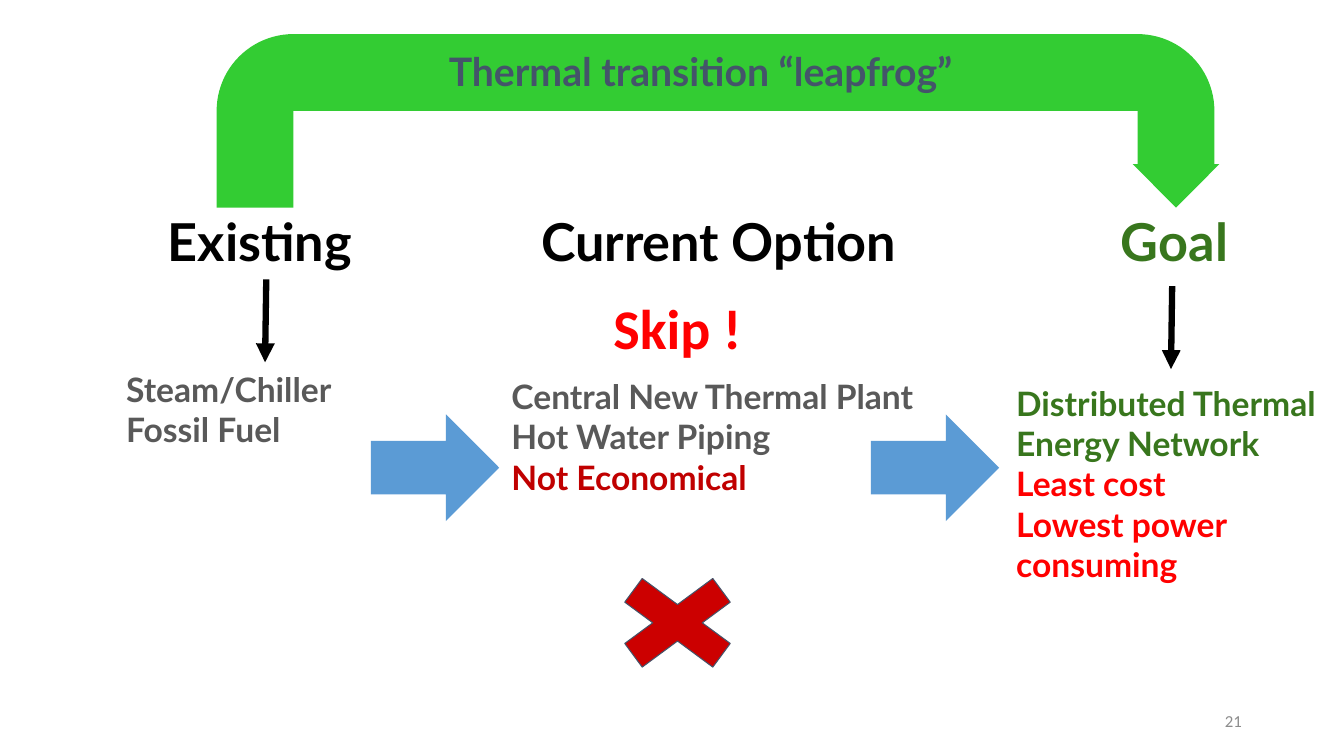
from lxml.etree import SubElement
from pptx import Presentation
from pptx.dml.color import RGBColor
from pptx.enum.shapes import MSO_CONNECTOR, MSO_SHAPE
from pptx.enum.text import MSO_ANCHOR, PP_ALIGN
from pptx.oxml.ns import qn
from pptx.util import Cm, Pt

BLACK, GREY, SLATE = "000000", "595959", "44546A"
GREEN, RED, DARK_RED, BLUE = "38761D", "FF0000", "C00000", "5B9BD5"


def set_color(color_format, value):
    color_format.rgb = RGBColor.from_string(value)


def add_text(s, box, lines, size, font="Lato", bold=True, align=PP_ALIGN.LEFT,
             anchor=MSO_ANCHOR.TOP, inset_x=0.34, inset_y=0.17):
    tf = s.shapes.add_textbox(*map(Cm, box)).text_frame
    tf.word_wrap = True
    tf.vertical_anchor = anchor
    tf.margin_left = tf.margin_right = Cm(inset_x)
    tf.margin_top = tf.margin_bottom = Cm(inset_y)
    for i, (text, color) in enumerate(lines):
        p = tf.add_paragraph() if i else tf.paragraphs[0]
        p.alignment = align
        r = p.add_run()
        r.text = text
        r.font.name = font
        r.font.size = Pt(size)
        r.font.bold = bold
        set_color(r.font.color, color)


def add_shape(s, kind, box, fill, adjustments, line=None):
    sp = s.shapes.add_shape(kind, *map(Cm, box))
    sp.shadow.inherit = False
    for i, value in enumerate(adjustments):
        sp.adjustments[i] = value
    sp.fill.solid()
    set_color(sp.fill.fore_color, fill)
    if line:
        set_color(sp.line.color, line)
        sp.line.width = Pt(0.75)
    else:
        sp.line.fill.background()


def add_arrow(s, x, y):
    c = s.shapes.add_connector(
        MSO_CONNECTOR.STRAIGHT, Cm(x), Cm(y), Cm(x - 0.03), Cm(y + 2.09))
    set_color(c.line.color, BLACK)
    c.line.width = Pt(4.5)
    SubElement(c.line._get_or_add_ln(), qn("a:tailEnd"), type="triangle")
    SubElement(c._element.spPr, qn("a:effectLst"))


def main():
    prs = Presentation()
    prs.slide_width, prs.slide_height = Cm(33.87), Cm(19.05)
    s = prs.slides.add_slide(prs.slide_layouts[6])

    for x, width, heading, color, align in [
        (3.89, 5.64, "Existing", BLACK, PP_ALIGN.LEFT),
        (12.47, 11.28, "Current Option", BLACK, PP_ALIGN.CENTER),
        (27.91, 5.18, "Goal", GREEN, PP_ALIGN.LEFT),
    ]:
        add_text(s, (x, 5.11, width, 1.93), [(heading, color)], 37.3, align=align)

    for box, lines in [
        ((2.84, 9.12, 7.16, 3.43),
         [("Steam/Chiller", GREY), ("Fossil Fuel", GREY)]),
        ((12.55, 9.3, 12.73, 3.43),
         [("Central New Thermal Plant", GREY), ("Hot Water Piping", GREY),
          ("Not Economical", DARK_RED)]),
        ((25.27, 9.47, 9.78, 5.46),
         [("Distributed Thermal Energy Network", GREEN), ("Least cost", RED),
          ("Lowest power consuming", RED)]),
    ]:
        add_text(s, box, lines, 24)

    add_arrow(s, 6.71, 7.04)
    add_arrow(s, 29.54, 7.21)

    add_shape(s, MSO_SHAPE.MATH_MULTIPLY, (14.94, 14.12, 4.27, 3.15),
              "CC0000", [0.235], SLATE)
    add_text(s, (14.35, 7.06, 5.44, 2.39), [("Skip !", RED)], 40,
             font="Calibri", align=PP_ALIGN.CENTER, inset_y=0.34)

    add_shape(s, MSO_SHAPE.U_TURN_ARROW, (5.46, 0.86, 25.27, 4.37),
              "33CC33", [0.443, 0.25, 0.25, 0.443, 1])
    for x in (9.35, 21.95):
        add_shape(s, MSO_SHAPE.RIGHT_ARROW, (x, 10.44, 3.23, 2.69), BLUE, [0.5, 0.5])
    add_text(s, (10.97, 0.86, 15.04, 0.89),
             [("Thermal transition “leapfrog”", SLATE)], 28, inset_y=0.34)

    add_text(s, (23.93, 17.65, 7.62, 1.02), [("21", "8C8C8C")], 12,
             font="Calibri", bold=False, align=PP_ALIGN.RIGHT,
             anchor=MSO_ANCHOR.MIDDLE, inset_x=0.25, inset_y=0.13)

    prs.save("out.pptx")


if __name__ == "__main__":
    main()
